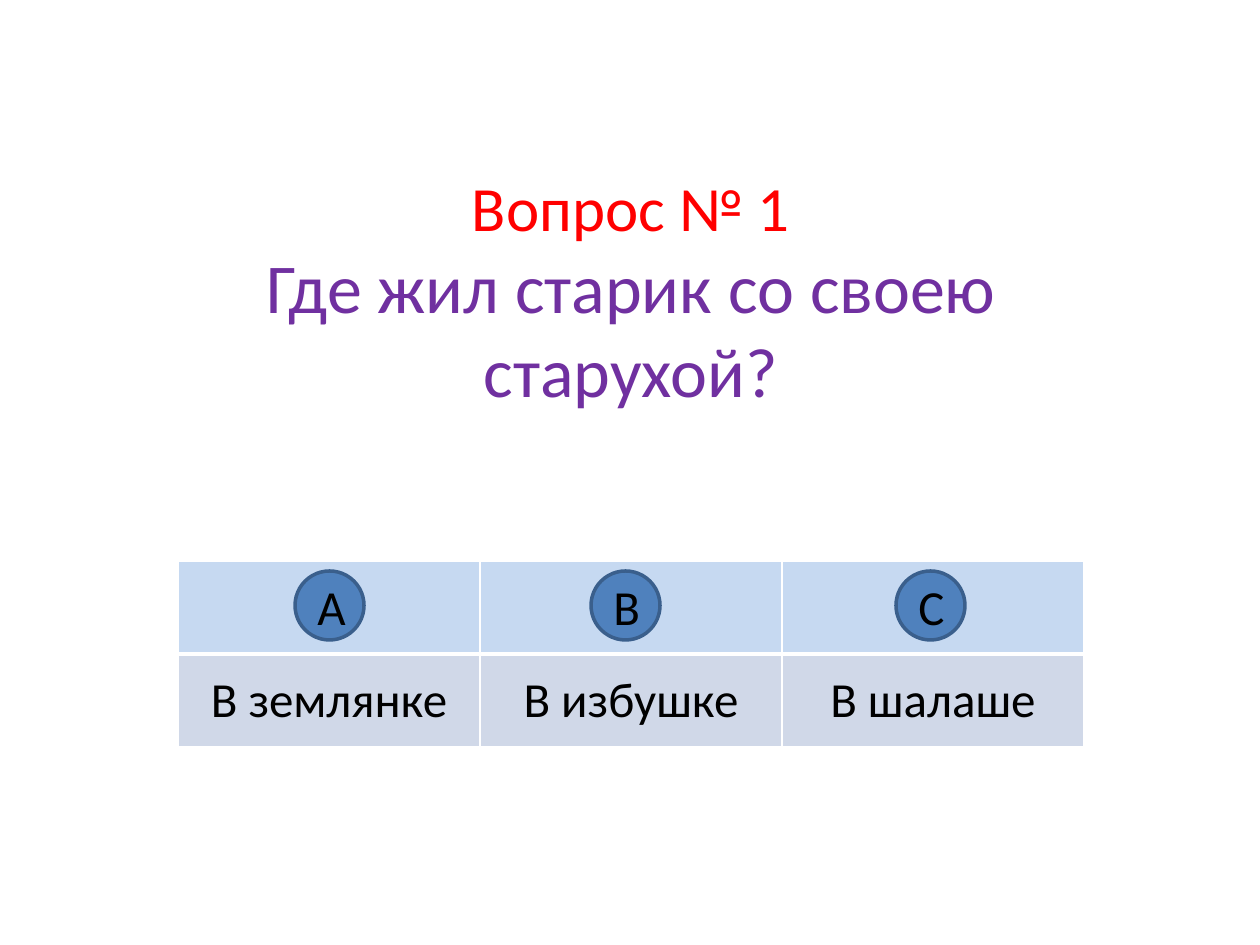
"""Build a quiz slide with a question and three lettered answers."""
from dataclasses import dataclass

import pptx
import pptx.dml.color
import pptx.enum.shapes
import pptx.enum.text
import pptx.oxml
import pptx.oxml.ns
import pptx.util

EMU_PER_PX = 914400 // 126
FONT = "Calibri"
BLACK, WHITE = "000000", "FFFFFF"
LEFT, WIDTH = 178, 906
TABLE_TOP, ROW_HEIGHT = 561, 93
BADGE_TOP, BADGE_SIZE = 571, 69


@dataclass
class Answer:
    letter: str
    text: str
    badge_left: int


ANSWERS = [
    Answer("А", "В землянке", 295),
    Answer("В", "В избушке", 591),
    Answer("С", "В шалаше", 896),
]


def px(length: int) -> pptx.util.Emu:
    return pptx.util.Emu(length * EMU_PER_PX)


def color(value: str) -> pptx.dml.color.RGBColor:
    return pptx.dml.color.RGBColor.from_string(value)


def paint(target, value: str) -> None:
    target.fill.solid()
    target.fill.fore_color.rgb = color(value)


def add_span(para, text: str, size: int, value: str) -> None:
    para.alignment = pptx.enum.text.PP_ALIGN.CENTER
    span = para.add_run()
    span.text = text
    span.font.name = FONT
    span.font.size = pptx.util.Pt(size)
    span.font.color.rgb = color(value)


def set_borders(cell, **widths: int) -> None:
    properties = cell._tc.get_or_add_tcPr()
    for index, (side, points) in enumerate(widths.items()):
        border = pptx.oxml.parse_xml(
            f'<a:ln{side} {pptx.oxml.ns.nsdecls("a")} w="{pptx.util.Pt(points)}">'
            f'<a:solidFill><a:srgbClr val="{WHITE}"/></a:solidFill></a:ln{side}>'
        )
        properties.insert(index, border)


def add_question(slide) -> None:
    box = slide.shapes.add_textbox(px(LEFT), px(38), px(WIDTH), px(504))
    paint(box, WHITE)
    frame = box.text_frame
    frame.word_wrap = True
    frame.vertical_anchor = pptx.enum.text.MSO_ANCHOR.MIDDLE
    para = frame.paragraphs[0]
    add_span(para, "Вопрос № 1", 36, "FF0000")
    para.add_line_break()
    add_span(para, "Где жил старик со своею старухой?", 40, "7030A0")


def add_answer_table(slide, answers: list[Answer]) -> None:
    table = slide.shapes.add_table(
        2, len(answers), px(LEFT), px(TABLE_TOP), px(WIDTH), px(2 * ROW_HEIGHT)
    ).table
    for column, answer in enumerate(answers):
        header, cell = table.cell(0, column), table.cell(1, column)
        paint(header, "C6D9F1")
        set_borders(header, L=1, R=1, T=1, B=3)
        paint(cell, "D0D8E8")
        set_borders(cell, L=1, R=1, T=3, B=1)
        cell.vertical_anchor = pptx.enum.text.MSO_ANCHOR.MIDDLE
        add_span(cell.text_frame.paragraphs[0], answer.text, 28, BLACK)


def add_badge(slide, answer: Answer) -> None:
    badge = slide.shapes.add_shape(
        pptx.enum.shapes.MSO_SHAPE.OVAL,
        px(answer.badge_left), px(BADGE_TOP), px(BADGE_SIZE), px(BADGE_SIZE),
    )
    badge.shadow.inherit = False
    paint(badge, "4F81BD")
    badge.line.color.rgb = color("3A5F8C")
    badge.line.width = pptx.util.Pt(2)
    badge.text_frame.word_wrap = True
    badge.text_frame.vertical_anchor = pptx.enum.text.MSO_ANCHOR.MIDDLE
    add_span(badge.text_frame.paragraphs[0], answer.letter, 28, BLACK)


def main() -> None:
    deck = pptx.Presentation()
    deck.slide_width, deck.slide_height = px(1260), px(945)
    slide = deck.slides.add_slide(deck.slide_layouts[6])
    add_question(slide)
    add_answer_table(slide, ANSWERS)
    for answer in ANSWERS:
        add_badge(slide, answer)
    deck.save("out.pptx")


if __name__ == "__main__":
    main()
